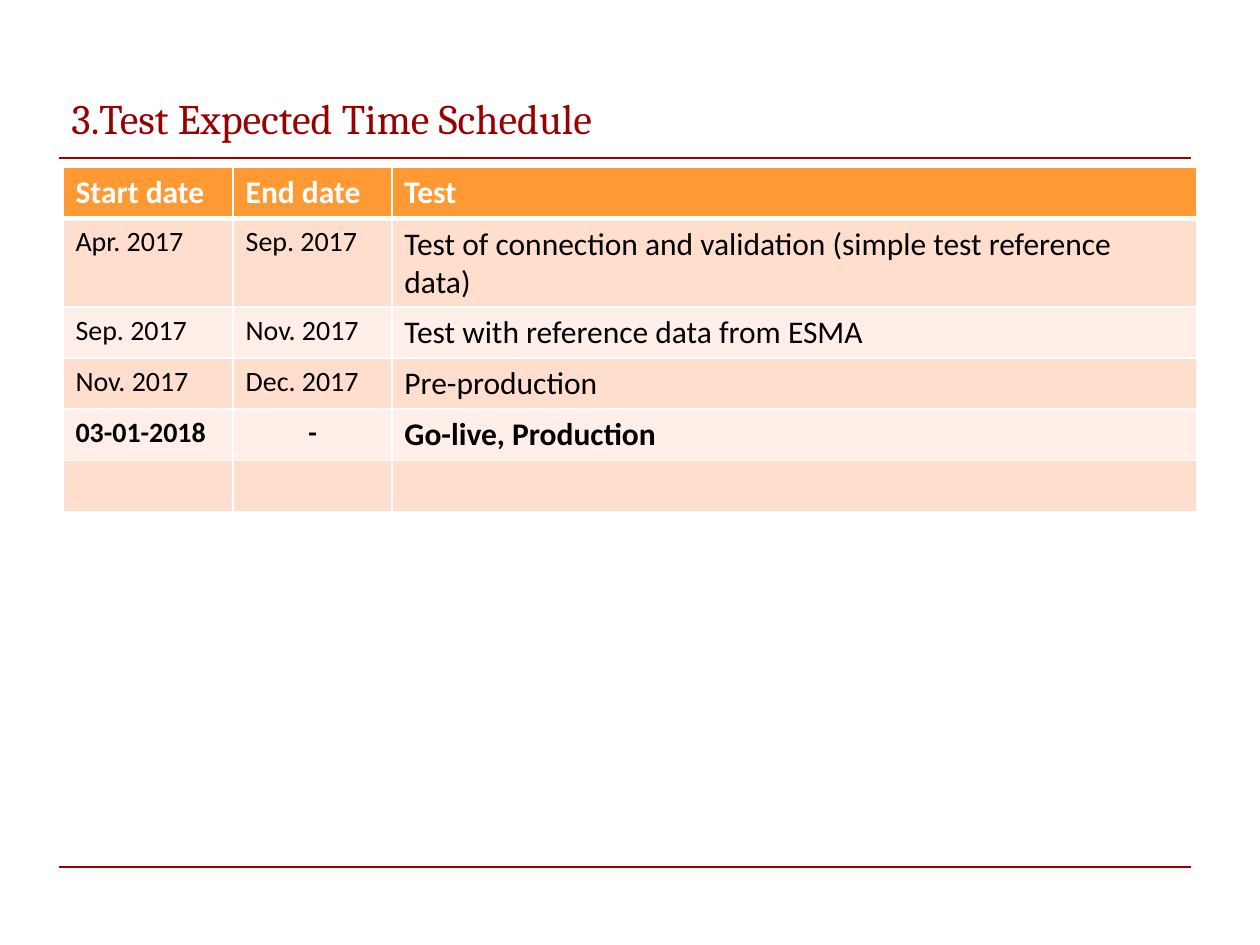
from lxml import etree
from pptx import Presentation
from pptx.dml.color import RGBColor
from pptx.enum.shapes import MSO_CONNECTOR
from pptx.enum.text import MSO_ANCHOR, PP_ALIGN
from pptx.oxml.ns import qn
from pptx.util import Cm, Pt

STRAIGHT = MSO_CONNECTOR.STRAIGHT
MIDDLE = MSO_ANCHOR.MIDDLE
LEFT, CENTER = PP_ALIGN.LEFT, PP_ALIGN.CENTER

DARK_RED, ORANGE, WHITE, BLACK = "990000", "FF9933", "FFFFFF", "000000"
BANDS = ("FFDECE", "FFEFE8")
COLUMN_WIDTHS = (3.43, 3.2, 16.23)
ROW_HEIGHT = 1.03
SCHEDULE = (
    ("Start date", "End date", "Test"),
    ("Apr. 2017", "Sep. 2017", "Test of connection and validation (simple test reference data)"),
    ("Sep. 2017", "Nov. 2017", "Test with reference data from ESMA"),
    ("Nov. 2017", "Dec. 2017", "Pre-production"),
    ("03-01-2018", "-", "Go-live, Production"),
    ("", "", ""),
)
GO_LIVE_ROW = 4


def color(value):
    return RGBColor.from_string(value)


def add_run(p, text, font, size, fill, bold=False):
    r = p.add_run()
    r.text = text
    r.font.name = font
    r.font.size = Pt(size)
    r.font.bold = bold
    r.font.color.rgb = color(fill)


def add_rule(s, x, y, width):
    line = s.shapes.add_connector(STRAIGHT, Cm(x), Cm(y), Cm(x + width), Cm(y))
    line.line.color.rgb = color(DARK_RED)
    line.line.width = Pt(1.25)
    etree.SubElement(line._element.spPr, qn("a:effectLst"))


def add_title(s, x, y, width, height):
    tf = s.shapes.add_textbox(Cm(x), Cm(y), Cm(width), Cm(height)).text_frame
    tf.word_wrap = True
    tf.vertical_anchor = MIDDLE
    add_run(tf.paragraphs[0], "3.Test Expected Time Schedule", "Cambria", 24, DARK_RED)


def set_borders(cell, widths):
    tcPr = cell._tc.get_or_add_tcPr()
    for side, width in widths.items():
        ln = etree.SubElement(tcPr, qn(f"a:ln{side}"), w=str(Pt(width)))
        fill = etree.SubElement(ln, qn("a:solidFill"))
        etree.SubElement(fill, qn("a:srgbClr"), val=WHITE)


def add_schedule(s, x, y):
    frame = s.shapes.add_table(
        len(SCHEDULE), len(COLUMN_WIDTHS), Cm(x), Cm(y),
        Cm(sum(COLUMN_WIDTHS)), Cm(ROW_HEIGHT * len(SCHEDULE)))
    table = frame.table
    for column, width in zip(table.columns, COLUMN_WIDTHS):
        column.width = Cm(width)
    for i, texts in enumerate(SCHEDULE):
        table.rows[i].height = Cm(ROW_HEIGHT)
        header = i == 0
        for j, text in enumerate(texts):
            cell = table.cell(i, j)
            set_borders(cell, {"L": 1, "R": 1, "T": 3 if i == 1 else 1, "B": 3 if header else 1})
            cell.fill.solid()
            cell.fill.fore_color.rgb = color(ORANGE if header else BANDS[(i - 1) % 2])
            p = cell.text_frame.paragraphs[0]
            p.alignment = CENTER if text == "-" else LEFT
            if text:
                size = 18 if header or j == 2 else 16
                add_run(p, text, "Calibri", size, WHITE if header else BLACK,
                        header or i == GO_LIVE_ROW)


def build_slide(prs):
    s = prs.slides.add_slide(prs.slide_layouts[6])
    for y in (3.18, 17.47):
        add_rule(s, 1.19, y, 22.81)
    add_title(s, 1.19, 1.5, 22.86, 1.75)
    add_schedule(s, 1.27, 3.38)


def main():
    prs = Presentation()
    prs.slide_width, prs.slide_height = Cm(25.4), Cm(19.05)
    build_slide(prs)
    prs.save("out.pptx")


if __name__ == "__main__":
    main()
